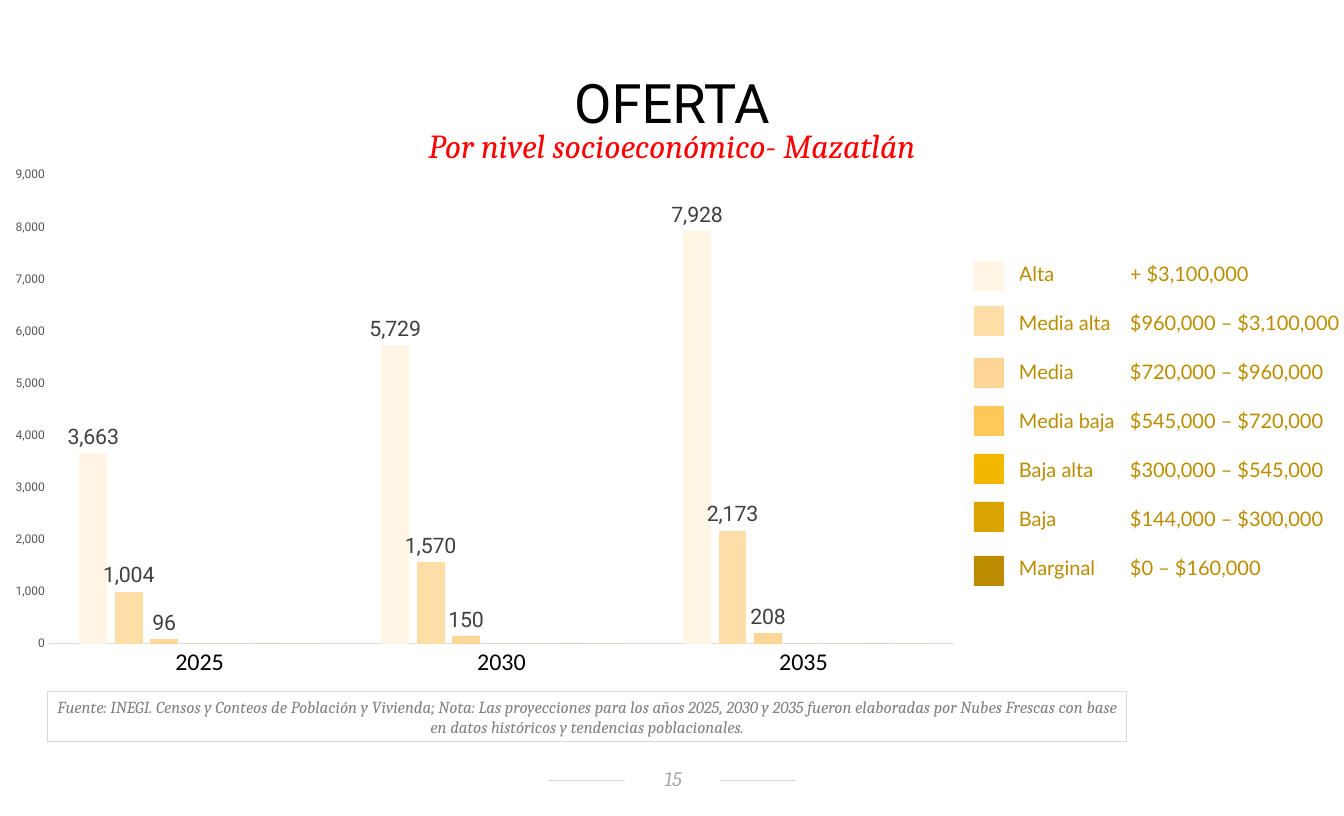
from lxml.etree import SubElement
from pptx import Presentation
from pptx.chart.data import CategoryChartData
from pptx.dml.color import RGBColor
from pptx.enum.chart import XL_CHART_TYPE as ChartType, XL_LABEL_POSITION as LabelPosition
from pptx.enum.chart import XL_TICK_MARK as TickMark
from pptx.enum.shapes import MSO_CONNECTOR as Connector, MSO_SHAPE as Shape
from pptx.enum.text import MSO_ANCHOR as Anchor, PP_ALIGN as Align
from pptx.oxml.ns import qn
from pptx.util import Pt

EMU_PER_PX = 9525
COLORS = {
    "black": "000000", "white": "FFFFFF", "red": "FF0000", "rule": "D9D9D9",
    "page": "A6A6A6", "note": "808080", "axis": "595959", "label": "404040",
    "gold": "BC8C00",
}
YEARS = ["2025", "2030", "2035"]
LEVELS = [
    ("Alta", "+ $3,100,000", "FFF5E5", 261, (3663, 5729, 7928)),
    ("Media alta", "$960,000 – $3,100,000", "FFDDA7", 306, (1004, 1570, 2173)),
    ("Media", "$720,000 – $960,000", "FFD695", 358, (96, 150, 208)),
    ("Media baja", "$545,000 – $720,000", "FFC859", 406, (0, 0, 0)),
    ("Baja alta", "$300,000 – $545,000", "F3B700", 454, (0, 0, 0)),
    ("Baja", "$144,000 – $300,000", "DAA400", 502, (0, 0, 0)),
    ("Marginal", "$0 – $160,000", "BC8C00", 556, (0, 0, 0)),
]
NOTE = (
    "Fuente: INEGI. Censos y Conteos de Población y Vivienda; Nota: Las proyecciones "
    "para los años 2025, 2030 y 2035 fueron elaboradas por Nubes Frescas con base en "
    "datos históricos y tendencias poblacionales."
)


def px(*lengths):
    return [length * EMU_PER_PX for length in lengths]


def rgb(name):
    return RGBColor.from_string(COLORS.get(name, name))


def style_font(font, face, size, color, italic=False):
    font.name, font.size, font.italic = face, Pt(size), italic
    font.color.rgb = rgb(color)


def style_line(line, color):
    line.color.rgb = rgb(color)
    line.width = Pt(0.75)


def write_text(shape, text, face, size, color, italic=False, margins=(10, 5, 10, 5)):
    frame = shape.text_frame
    frame.word_wrap = True
    (frame.margin_left, frame.margin_top,
     frame.margin_right, frame.margin_bottom) = px(*margins)
    paragraph = frame.paragraphs[0]
    paragraph.text = text
    paragraph.alignment = Align.CENTER
    style_font(paragraph.font, face, size, color, italic)
    return paragraph


def add_box(slide, box, fill=None, line=None):
    shape = slide.shapes.add_shape(Shape.RECTANGLE, *px(*box))
    shape.shadow.inherit = False
    if fill:
        shape.fill.solid()
        shape.fill.fore_color.rgb = rgb(fill)
    else:
        shape.fill.background()
    if line:
        style_line(shape.line, line)
    else:
        shape.line.fill.background()
    return shape


def add_heading(slide, box, *text_style):
    return write_text(slide.shapes.add_textbox(*px(*box)), *text_style)


def add_page_number(slide):
    rule = slide.shapes.add_connector(Connector.STRAIGHT, *px(548, 781, 796, 781))
    style_line(rule.line, "rule")
    SubElement(rule._element.spPr, qn("a:effectLst"))
    box = add_box(slide, (625, 766, 95, 28), fill="white")
    box.text_frame.vertical_anchor = Anchor.MIDDLE
    write_text(box, "15", "Cambria", 15.4, "page", True, (10, 2, 9, 5))


def add_price_table(slide):
    table = slide.shapes.add_table(len(LEVELS), 2, *px(1019, 249, 328, 343)).table
    table.first_row = table.horz_banding = False
    for column, width in zip(table.columns, px(111, 217)):
        column.width = width
    for row, level in zip(table.rows, LEVELS):
        row.height = px(49)[0]
        for cell, text in zip(row.cells, level[:2]):
            cell.fill.background()
            cell.vertical_anchor = Anchor.MIDDLE
            cell.margin_left = cell.margin_right = cell.margin_top = cell.margin_bottom = 0
            paragraph = cell.text_frame.paragraphs[0]
            paragraph.text = text
            style_font(paragraph.font, "Lato", 15, "gold")


def place_plot(chart, **fractions):
    plot_area = chart._chartSpace.chart.plotArea
    layout = plot_area.find(qn("c:layout"))
    if layout is None:
        layout = plot_area.makeelement(qn("c:layout"))
        plot_area.insert(0, layout)
    manual = SubElement(layout, qn("c:manualLayout"))
    settings = {"layoutTarget": "inner", "xMode": "edge", "yMode": "edge", **fractions}
    for tag, value in settings.items():
        SubElement(manual, qn(f"c:{tag}")).set("val", str(value))


def style_axes(chart):
    for axis in (chart.category_axis, chart.value_axis):
        axis.major_tick_mark = axis.minor_tick_mark = TickMark.NONE
        axis.has_major_gridlines = False
    style_font(chart.category_axis.tick_labels.font, "Calibri", 18, "black")
    style_line(chart.category_axis.format.line, "rule")
    values = chart.value_axis
    values.minimum_scale, values.maximum_scale, values.major_unit = 0, 9000, 1000
    values.format.line.fill.background()
    values.tick_labels.number_format = "#,##0"
    values.tick_labels.number_format_is_linked = False
    style_font(values.tick_labels.font, "Roboto", 9, "axis")


def add_offer_chart(slide):
    data = CategoryChartData(number_format="#,##0")
    data.categories = YEARS
    for name, _, _, _, values in LEVELS:
        data.add_series(name, values)
    chart = slide.shapes.add_chart(
        ChartType.COLUMN_CLUSTERED, *px(0, 159, 974, 533), data).chart
    chart.has_legend = chart.has_title = False
    style_font(chart.font, "Calibri", 10, "black")
    style_axes(chart)
    place_plot(chart, x=0.05, y=0.03, w=0.93, h=0.88)
    plot = chart.plots[0]
    plot.gap_width, plot.overlap, plot.vary_by_categories = 219, -27, False
    for series, (_, _, color, _, values) in zip(plot.series, LEVELS):
        series.format.fill.solid()
        series.format.fill.fore_color.rgb = rgb(color)
        if any(values):
            labels = series.data_labels
            labels.show_value = True
            labels.position = LabelPosition.OUTSIDE_END
            labels.number_format = "#,##0"
            labels.number_format_is_linked = False
            style_font(labels.font, "Roboto", 16, "label")


def main():
    """Build the slide on housing supply by socioeconomic level."""
    presentation = Presentation()
    presentation.slide_width, presentation.slide_height = px(1344, 816)
    slide = presentation.slides.add_slide(presentation.slide_layouts[6])
    add_page_number(slide)
    note = add_box(slide, (47, 691, 1080, 51), line="rule")
    note.text_frame.vertical_anchor = Anchor.MIDDLE
    write_text(note, NOTE, "Cambria", 12.6, "note", True)
    title = add_heading(slide, (47, 82, 1250, 58), "OFERTA", "Roboto", 40.8, "black")
    title.line_spacing = 0.7
    add_heading(slide, (0, 120, 1344, 51), "Por nivel socioeconómico- Mazatlán",
                "Cambria", 25.2, "red", True)
    add_price_table(slide)
    for _, _, color, top, _ in LEVELS:
        add_box(slide, (974, top, 30, 30), fill=color)
    add_offer_chart(slide)
    presentation.save("out.pptx")


if __name__ == "__main__":
    main()
